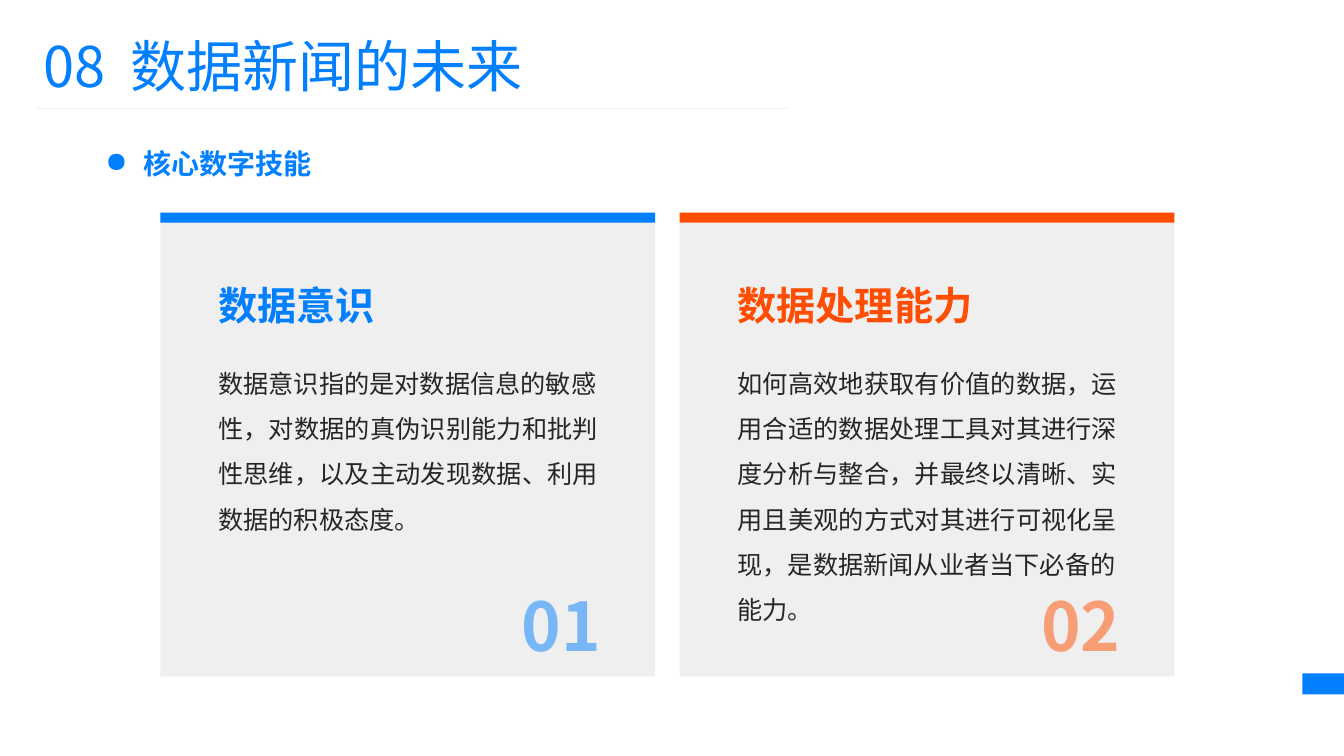
"""Build the slide on core digital skills for data journalism."""
from dataclasses import dataclass
from typing import Optional

from pptx import Presentation
from pptx.dml.color import RGBColor
from pptx.enum.shapes import MSO_CONNECTOR as Connector, MSO_SHAPE as Shape
from pptx.enum.text import MSO_ANCHOR as Anchor, PP_ALIGN as Align
from pptx.oxml.ns import qn
from pptx.slide import Slide
from pptx.text.text import TextFrame, _Paragraph as Paragraph, _Run as Run
from pptx.util import Emu, Inches, Pt
from lxml.etree import SubElement

BLUE = RGBColor(0x02, 0x7F, 0xFD)
ORANGE = RGBColor(0xFF, 0x4E, 0x01)
GREY = RGBColor(0x99, 0x99, 0x99)
PALE = RGBColor(0xF2, 0xF2, 0xF2)
INK = RGBColor(0x26, 0x26, 0x26)
FONT = "Noto Sans CJK SC"
WIDTH, HEIGHT = Inches(13.33), Inches(7.5)
CARD_LEFT, CARD_PITCH, CARD_WIDTH = 11.93, 38.63, 36.83
CARD_TOP, CARD_HEIGHT, BAR_HEIGHT = 28.13, 61.33, 1.33
TEXT_INSET, TEXT_WIDTH = 4.31, 28.28


@dataclass(frozen=True)
class Box:
    """Position and size in percent of the slide's width and height."""
    x: float
    y: float
    w: float
    h: float

    def emu(self) -> tuple[Emu, Emu, Emu, Emu]:
        return (Emu(round(self.x * WIDTH / 100)), Emu(round(self.y * HEIGHT / 100)),
                Emu(round(self.w * WIDTH / 100)), Emu(round(self.h * HEIGHT / 100)))


@dataclass(frozen=True)
class Style:
    """Look of a run of text."""
    size: int
    color: RGBColor
    bold: bool = False
    alpha: Optional[int] = None


@dataclass(frozen=True)
class Card:
    """One skill with its accent colour."""
    heading: str
    body: tuple[str, ...]
    color: RGBColor


CARDS = (
    Card("数据意识",
         ("数据意识指的是对数据信息的敏感",
          "性，对数据的真伪识别能力和批判性思维，以及主动发现数据、利用数据的积极态度。"), BLUE),
    Card("数据处理能力",
         ("如何高效地获取有价值的数据，运用合适的数据处理工具对其进行深度分析与整合，"
          "并最终以清晰、实用且美观的方式对其进行可视化呈现，是数据新闻从业者当下必备的",
          "能力。"), ORANGE),
)


def set_alpha(fill, percent: int) -> None:
    """Make a solid fill partly transparent."""
    color = fill._xPr.find(qn("a:solidFill"))[0]
    SubElement(color, qn("a:alpha")).set("val", str(percent * 1000))


def add_rect(s: Slide, box: Box, color: RGBColor, alpha: Optional[int] = None) -> None:
    """Draw a plain rectangle."""
    sp = s.shapes.add_shape(Shape.RECTANGLE, *box.emu())
    sp.shadow.inherit = False
    sp.line.fill.background()
    sp.fill.solid()
    sp.fill.fore_color.rgb = color
    if alpha is not None:
        set_alpha(sp.fill, alpha)


def add_frame(s: Slide, box: Box, anchor: Anchor = Anchor.TOP,
              inset: bool = False, wrap: bool = True) -> TextFrame:
    """Add an empty text box."""
    tf = s.shapes.add_textbox(*box.emu()).text_frame
    tf.word_wrap = wrap
    tf.vertical_anchor = anchor
    if not inset:
        tf.margin_left = tf.margin_top = tf.margin_right = tf.margin_bottom = 0
    return tf


def add_run(p: Paragraph, text: str, style: Style) -> Run:
    """Append one styled run."""
    r = p.add_run()
    r.text = text
    r.font.size, r.font.bold = Pt(style.size), style.bold
    r.font.color.rgb = style.color
    if style.alpha is not None:
        set_alpha(r.font.fill, style.alpha)
    r.font.name = FONT
    SubElement(r.font._element, qn("a:ea")).set("typeface", FONT)
    return r


def add_paragraphs(tf: TextFrame, texts: tuple[str, ...], style: Style,
                   align: Align, spacing: Optional[float] = None) -> None:
    """Fill a frame with one run per paragraph."""
    for i, text in enumerate(texts):
        p = tf.add_paragraph() if i else tf.paragraphs[0]
        p.alignment = align
        if spacing:
            p.line_spacing = spacing
        add_run(p, text, style)


def add_title(s: Slide) -> None:
    """Draw the section title and its rule."""
    p = add_frame(s, Box(2.48, 3.47, 57.61, 10.27), inset=True).paragraphs[0]
    style = Style(40, BLUE)
    add_run(p, "08", style)
    add_run(p, " ", style).font._element.set("spc", "900")
    add_run(p, "数据新闻的未来", style)
    x, y, w, _ = Box(2.63, 14.4, 56.11, 0).emu()
    rule = s.shapes.add_connector(Connector.STRAIGHT, x, y, x + w, y)
    rule.line.color.rgb = PALE
    rule.line.width = Pt(0.5)
    SubElement(rule._element.spPr, qn("a:effectLst"))


def add_subtitle(s: Slide) -> None:
    """Draw the bulleted subtitle."""
    p = add_frame(s, Box(3.45, 18, 24.16, 5.87), Anchor.BOTTOM).paragraphs[0]
    p.alignment = Align.CENTER
    pPr = p._p.get_or_add_pPr()
    pPr.set("marL", str(Inches(0.38)))
    pPr.set("indent", str(-Inches(0.38)))
    SubElement(pPr, qn("a:buChar")).set("char", "●")
    add_run(p, "核心数字技能", Style(20, BLUE, bold=True))


def add_card(s: Slide, index: int, card: Card) -> None:
    """Draw one skill card in its column."""
    x = CARD_LEFT + index * CARD_PITCH
    add_rect(s, Box(x, CARD_TOP, CARD_WIDTH, CARD_HEIGHT), GREY, 15)
    add_rect(s, Box(x, CARD_TOP, CARD_WIDTH, BAR_HEIGHT), card.color)
    heading = add_frame(s, Box(x + TEXT_INSET, 29.47, TEXT_WIDTH, 14), Anchor.BOTTOM)
    add_paragraphs(heading, (card.heading,), Style(28, card.color, bold=True), Align.JUSTIFY)
    body = add_frame(s, Box(x + TEXT_INSET, 46.67, TEXT_WIDTH, 35.47))
    add_paragraphs(body, card.body, Style(18, INK), Align.JUSTIFY, 1.5)
    number = add_frame(s, Box(x + 24.1, 76.27, 8.7, 12.67), Anchor.MIDDLE, wrap=False)
    add_paragraphs(number, (f"{index + 1:02}",), Style(48, card.color, True, 50), Align.RIGHT)


def main() -> None:
    """Assemble and save the slide."""
    prs = Presentation()
    prs.slide_width, prs.slide_height = WIDTH, HEIGHT
    s = prs.slides.add_slide(prs.slide_layouts[6])
    add_rect(s, Box(96.9, 89.07, 3.1, 2.8), BLUE)
    add_title(s)
    for index, card in enumerate(CARDS):
        add_card(s, index, card)
    add_subtitle(s)
    prs.save("out.pptx")


if __name__ == "__main__":
    main()
